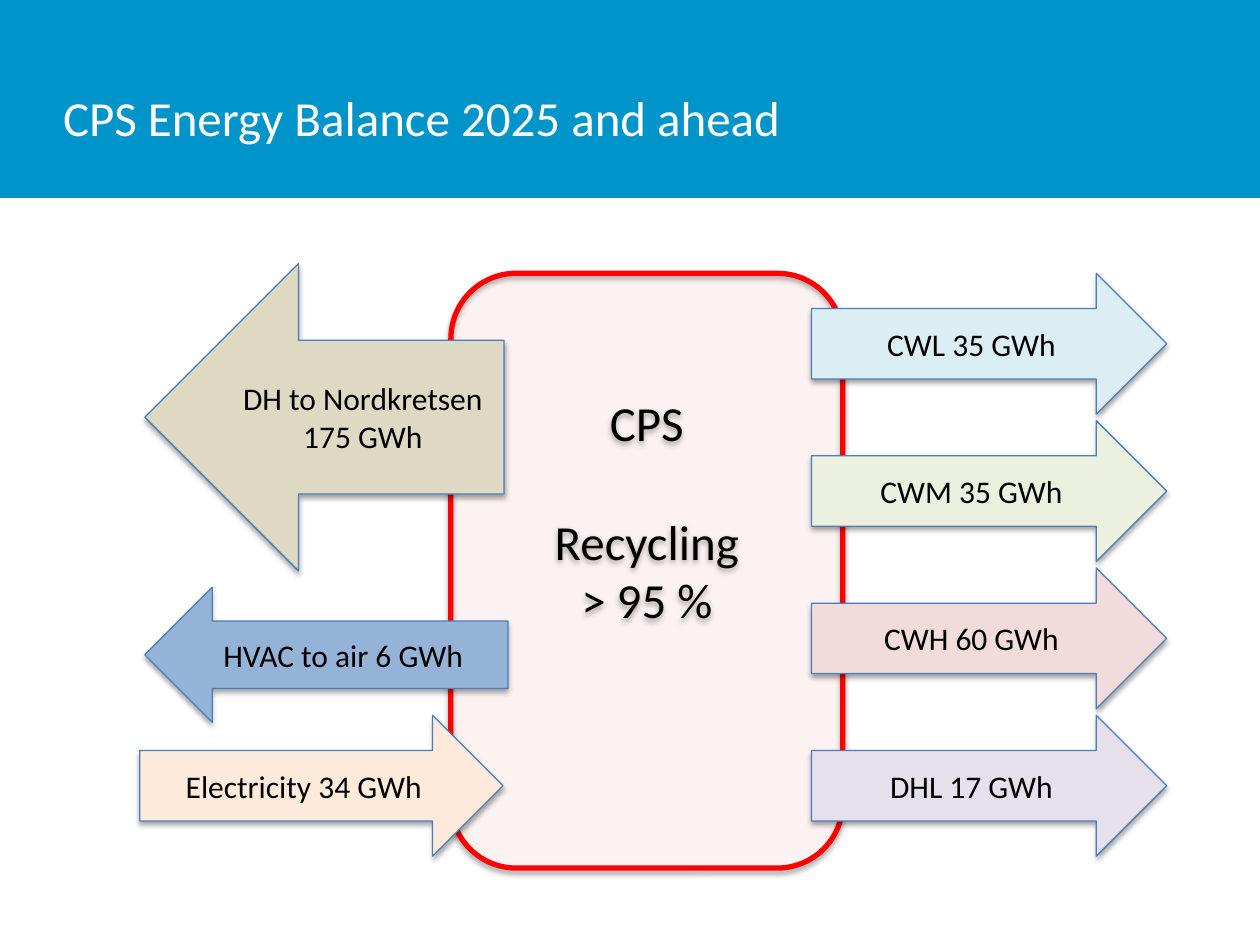
from dataclasses import dataclass

from lxml.etree import SubElement
from pptx import Presentation
from pptx.dml.color import RGBColor
from pptx.enum.shapes import MSO_SHAPE
from pptx.enum.text import MSO_ANCHOR, MSO_AUTO_SIZE, PP_ALIGN
from pptx.oxml.ns import qn
from pptx.util import Cm, Pt

FONT = "Calibri"
BLACK, WHITE, RED = "000000", "FFFFFF", "FF0000"
BAND_BLUE, ARROW_LINE = "0094CA", "4B7EBC"

# Arrow rows on the right, in cm; the electricity arrow shares the last row
ROW_TOP, ROW_STEP, ROW_HEIGHT = 5.51, 2.97, 2.84


@dataclass
class Block:
    lines: list[str]
    left: float
    top: float
    width: float
    height: float
    fill: str
    preset: MSO_SHAPE = MSO_SHAPE.RIGHT_ARROW
    line: str = ARROW_LINE
    line_width: float = 0.75
    size: int = 18


def color(value: str) -> RGBColor:
    return RGBColor.from_string(value)


def add_run(paragraph, text: str, size: int, font_color: str) -> None:
    run = paragraph.add_run()
    run.text = text
    run.font.name = FONT
    run.font.size = Pt(size)
    run.font.color.rgb = color(font_color)


def set_alpha(color_element, percent: int) -> None:
    SubElement(color_element, qn("a:alpha"), val=str(percent * 1000))


def add_shadow(shape) -> None:
    """Soft black shadow straight below the shape."""
    shape.shadow.inherit = False
    effects = shape.element.spPr.find(qn("a:effectLst"))
    shadow = SubElement(effects, qn("a:outerShdw"), blurRad=str(Pt(3.1)),
                        dist=str(Pt(1.8)), dir="5400000", rotWithShape="0")
    set_alpha(SubElement(shadow, qn("a:srgbClr"), val=BLACK), 35)


def add_block(slide, block: Block):
    shape = slide.shapes.add_shape(block.preset, Cm(block.left), Cm(block.top),
                                   Cm(block.width), Cm(block.height))
    shape.fill.solid()
    shape.fill.fore_color.rgb = color(block.fill)
    shape.line.color.rgb = color(block.line)
    shape.line.width = Pt(block.line_width)
    add_shadow(shape)
    frame = shape.text_frame
    frame.vertical_anchor = MSO_ANCHOR.MIDDLE
    for index, text in enumerate(block.lines):
        paragraph = frame.add_paragraph() if index else frame.paragraphs[0]
        paragraph.alignment = PP_ALIGN.CENTER
        add_run(paragraph, text, block.size, BLACK)
    return shape


def add_header(slide, text: str) -> None:
    title = slide.shapes.title
    title.left, title.top, title.width, title.height = Cm(1.27), Cm(0.76), Cm(22.86), Cm(3.18)
    frame = title.text_frame
    frame.margin_left = frame.margin_right = frame.margin_top = frame.margin_bottom = 0
    frame.auto_size = MSO_AUTO_SIZE.NONE
    frame.vertical_anchor = MSO_ANCHOR.MIDDLE
    frame.paragraphs[0].alignment = PP_ALIGN.LEFT
    add_run(frame.paragraphs[0], text, 28, WHITE)

    band = slide.shapes.add_shape(MSO_SHAPE.RECTANGLE, 0, 0, Cm(25.4), Cm(3.99))
    band.fill.solid()
    band.fill.fore_color.rgb = color(BAND_BLUE)
    band.line.fill.background()
    band.shadow.inherit = False
    title.element.addprevious(band.element)  # the band lies behind the title


def add_plant(slide) -> None:
    plant = add_block(slide, Block(["CPS", "Recycling", "> 95 %"], 9.09, 5.51, 7.9, 11.99,
                                   RED, MSO_SHAPE.ROUNDED_RECTANGLE, RED, 3, 28))
    set_alpha(plant.element.spPr.find(qn("a:solidFill"))[0], 4)
    plant.text_frame.margin_bottom = Cm(2.54)  # lifts the text above the middle
    plant.text_frame.paragraphs[1].space_before = Pt(34)


def main() -> None:
    presentation = Presentation()
    presentation.slide_width, presentation.slide_height = Cm(25.4), Cm(19.05)
    slide = presentation.slides.add_slide(presentation.slide_layouts[5])

    add_header(slide, "CPS Energy Balance 2025 and ahead")
    add_plant(slide)

    # Flows out to the right
    outputs = [("CWL 35 GWh", "DBEEF4"), ("CWM 35 GWh", "EBF1DE"),
               ("CWH 60 GWh", "F2DCDB"), ("DHL 17 GWh", "E6E0EC")]
    for row, (text, fill) in enumerate(outputs):
        add_block(slide, Block([text], 16.36, ROW_TOP + row * ROW_STEP, 7.16, ROW_HEIGHT, fill))

    # Flows on the left: one in, two out
    left_flows = [
        Block(["Electricity 34 GWh"], 2.82, ROW_TOP + 3 * ROW_STEP, 7.32, ROW_HEIGHT, "FDEADA"),
        Block(["DH to Nordkretsen", "175 GWh"], 2.92, 5.31, 7.24, 6.2, "DDD9C3",
              MSO_SHAPE.LEFT_ARROW),
        Block(["HVAC to air 6 GWh"], 2.92, 11.84, 7.32, 2.72, "95B3D7", MSO_SHAPE.LEFT_ARROW),
    ]
    for flow in left_flows:
        add_block(slide, flow)

    presentation.save("out.pptx")


if __name__ == "__main__":
    main()
